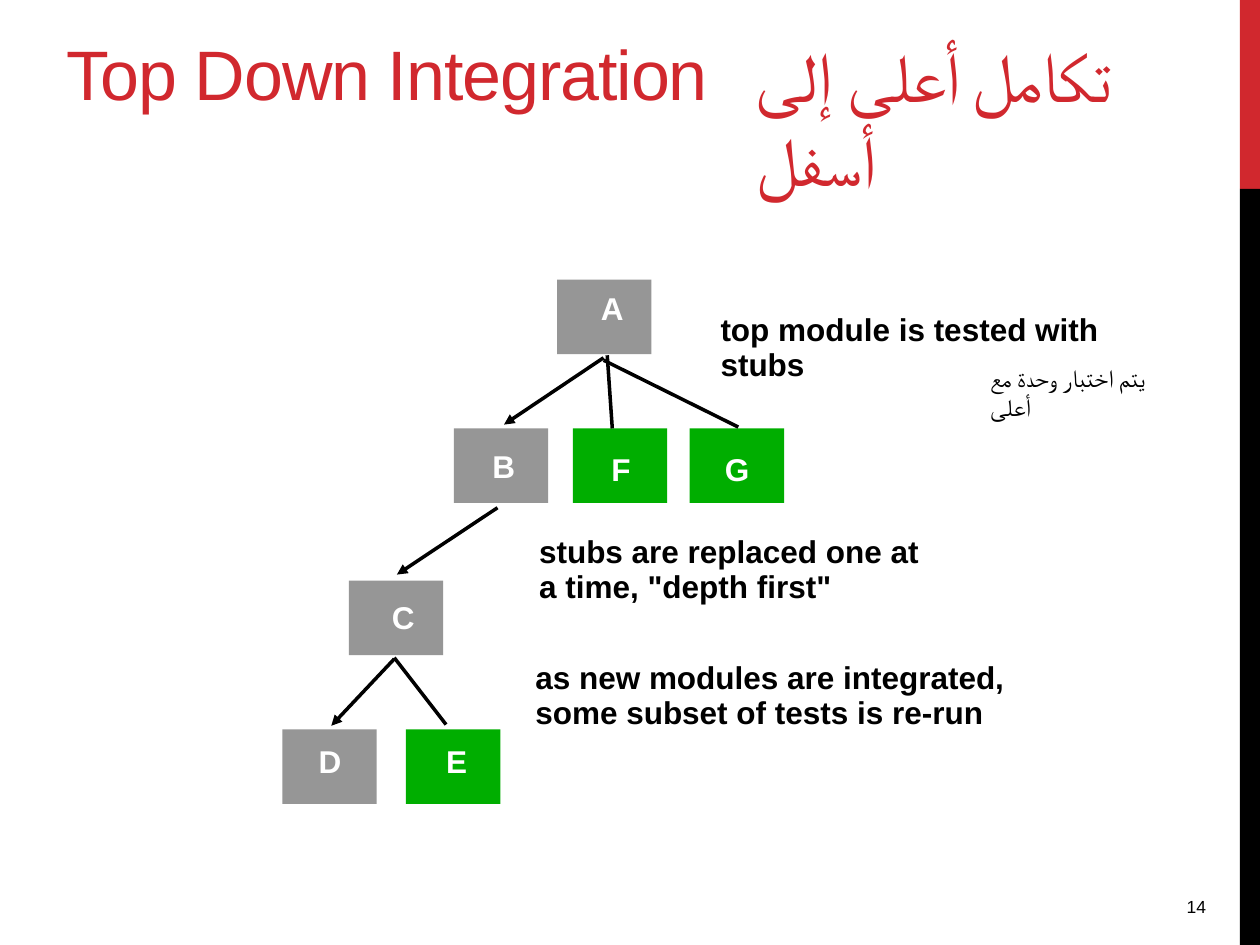
from lxml import etree
from pptx import Presentation
from pptx.dml.color import RGBColor
from pptx.enum.shapes import MSO_CONNECTOR, MSO_SHAPE
from pptx.enum.text import MSO_ANCHOR, PP_ALIGN
from pptx.oxml.ns import qn
from pptx.util import Pt

RECTANGLE = MSO_SHAPE.RECTANGLE
STRAIGHT = MSO_CONNECTOR.STRAIGHT
TOP, MIDDLE, BOTTOM = MSO_ANCHOR.TOP, MSO_ANCHOR.MIDDLE, MSO_ANCHOR.BOTTOM
LEFT, RIGHT = PP_ALIGN.LEFT, PP_ALIGN.RIGHT

COLORS = {
    "red": "D1282E",
    "black": "000000",
    "white": "FFFFFF",
    "tested": "969696",
    "stub": "00AE00",
}
FONT = "Arial"
NODE_WIDTH, NODE_HEIGHT = 54, 42.5
LINE_STEP = 20.16

NODES = [
    ("A", "tested", 157, 0, 18, 2),
    ("B", "tested", 98, 85, 15, 7),
    ("C", "tested", 38, 172, 17.5, 6.5),
    ("D", "tested", 0, 257, 13.7, 3.6),
    ("E", "stub", 70.7, 257, 15.8, 3.6),
    ("F", "stub", 166, 85, 15, 8.6),
    ("G", "stub", 232.8, 85, 13, 8.6),
]
BRANCHES = [
    (64, 216, 93.6, 254.2, False),
    (185.7, 43.2, 188.6, 85, False),
    (183.6, 46, 260.6, 84.2, False),
    (183.6, 44.6, 126.7, 82.8, True),
    (123, 130.3, 65.5, 168.5, True),
    (64, 216.7, 28, 254.9, True),
]
NOTES = [
    (404.64, 173.52, ["top module is tested with", "stubs"]),
    (300.96, 300.24, ["stubs are replaced one at", 'a time, "depth first"']),
    (298.8, 372.24, ["as new modules are integrated,", "some subset of tests is re-run"]),
]


def color(name):
    return RGBColor.from_string(COLORS[name])


def add_block(page, box, fill):
    block = page.shapes.add_shape(RECTANGLE, *map(Pt, box))
    block.shadow.inherit = False
    block.fill.solid()
    block.fill.fore_color.rgb = color(fill)
    block.line.fill.background()


def add_text(page, box, text, size, tint, bold=False, wrap=False,
             anchor=TOP, align=LEFT, spacing=None):
    frame = page.shapes.add_textbox(*map(Pt, box)).text_frame
    frame.word_wrap = wrap
    frame.vertical_anchor = anchor
    para = frame.paragraphs[0]
    para.alignment = align
    span = para.add_run()
    span.text = text
    span.font.name = FONT
    span.font.size = Pt(size)
    span.font.bold = bold
    span.font.color.rgb = color(tint)
    if spacing is not None:
        span.font._element.set("spc", str(spacing))


def add_branch(page, start, end, arrow):
    branch = page.shapes.add_connector(STRAIGHT, *map(Pt, (*start, *end)))
    branch.line.color.rgb = color("black")
    branch.line.width = Pt(2)
    if arrow:
        tail = etree.SubElement(branch.line._get_or_add_ln(), qn("a:tailEnd"))
        tail.set("type", "triangle")
    etree.SubElement(branch._element.spPr, qn("a:effectLst"))


def add_side_band(page, box):
    left, top, width, height = box
    split = height / 5
    add_block(page, (left, top, width, split), "red")
    add_block(page, (left, top + split, width, height - split), "black")


def add_heading(page, box):
    left, top, width, height = box
    add_text(page, (left, top + 5.76, 416.9, 41), "Top Down Integration", 40,
             "red", wrap=True, anchor=MIDDLE, spacing=-60)
    add_text(page, (left + 394.5, top, width - 394.5, height),
             "تكامل أعلى إلى أسفل", 40, "red", wrap=True, spacing=-60)


def add_module_tree(page, box):
    left, top = box[:2]
    for name, fill, x, y, label_x, label_y in NODES:
        add_block(page, (left + x, top + y, NODE_WIDTH, NODE_HEIGHT), fill)
        add_text(page, (left + x + label_x, top + y + label_y, 27, 29), name,
                 18, "white", bold=True, wrap=True)
    for x1, y1, x2, y2, arrow in BRANCHES:
        add_branch(page, (left + x1, top + y1), (left + x2, top + y2), arrow)


def add_note(page, box, lines):
    left, top, width, height = box
    for index, line in enumerate(lines):
        add_text(page, (left, top + index * LINE_STEP, width, height), line,
                 18, "black", bold=True, wrap=True)


def main():
    deck = Presentation()
    deck.slide_width, deck.slide_height = Pt(720), Pt(540)
    page = deck.slides.add_slide(deck.slide_layouts[6])
    add_side_band(page, (708.5, 0, 11.5, 540))
    add_heading(page, (31, 15.12, 665.2, 55.4))
    add_module_tree(page, (161.3, 159.84, 286.8, 299.5))
    for left, top, lines in NOTES:
        add_note(page, (left, top, 290, 29), lines)
    add_text(page, (558.72, 203.76, 125.3, 24.5), "يتم اختبار وحدة مع أعلى",
             14, "black", wrap=True)
    add_text(page, (594, 491.8, 102.2, 36), "14", 10, "black", wrap=True,
             anchor=BOTTOM, align=RIGHT)
    deck.save("out.pptx")


if __name__ == "__main__":
    main()
